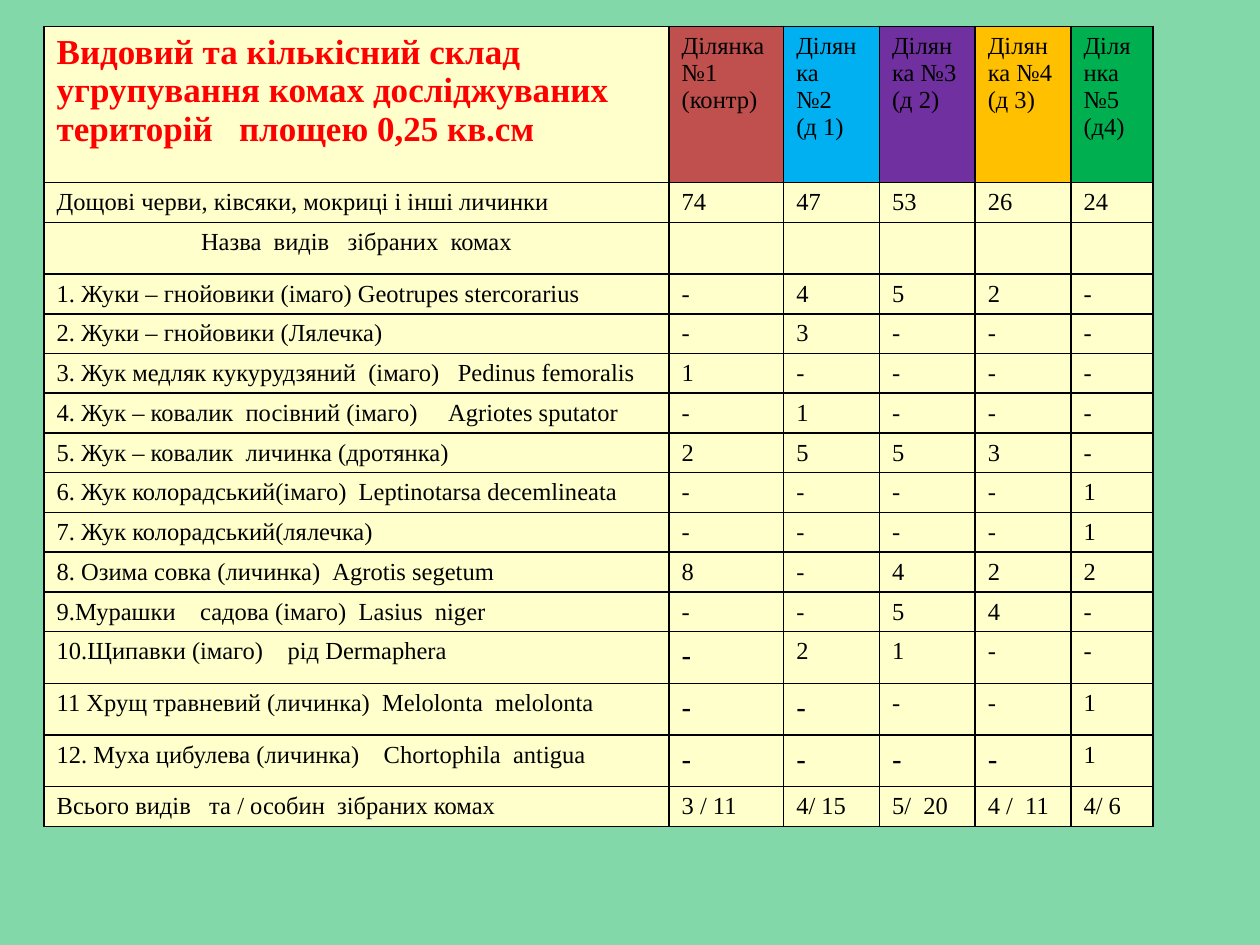
from lxml.etree import SubElement as Sub
from pptx import Presentation
from pptx.dml.color import RGBColor as RGB
from pptx.enum.text import PP_ALIGN as Align
from pptx.oxml.ns import qn
from pptx.util import Inches as In, Pt

HUES = {
    "back": "82D8A9", "cream": "FFFFCC", "title": "FF0000", "ink": "000000",
    "plot1": "C0504D", "plot2": "00B0F0", "plot3": "7030A0",
    "plot4": "FFC000", "plot5": "00B050",
}
SERIF, SANS = "Times New Roman", "Calibri"

# Column widths and row heights of the grid, in inches
COLS = [4.96, 0.91, 0.76, 0.76, 0.76, 0.65]
HEAD, ROW, TALL = 1.24, 0.31, 0.41
# Tall rows, with how many counts in each are set large
LARGE = {2: 5, 12: 1, 13: 2, 14: 4}

HEADS = [
    "Видовий та кількісний склад угрупування комах досліджуваних "
    "територій   площею 0,25 кв.см",
    "Ділянка №1\n(контр)", "Ділянка\n№2\n(д 1)", "Ділянка №3\n(д 2)",
    "Ділянка №4\n(д 3)", "Ділянка №5\n(д4)",
]
# Name and five counts for each row
ROWS = [line.split("|") for line in (
    "Дощові черви, ківсяки, мокриці і інші личинки|74|47|53|26|24",
    "Назва  видів   зібраних  комах|||||",
    "1. Жуки – гнойовики (імаго) Geotrupes stercorarius|-|4|5|2|-",
    "2. Жуки – гнойовики (Лялечка)|-|3|-|-|-",
    "3. Жук медляк кукурудзяний  (імаго)   Pedinus femoralis|1|-|-|-|-",
    "4. Жук – ковалик  посівний (імаго)     Agriotes sputator|-|1|-|-|-",
    "5. Жук – ковалик  личинка (дротянка)|2|5|5|3|-",
    "6. Жук колорадський(імаго)  Leptinotarsa decemlineata|-|-|-|-|1",
    "7. Жук колорадський(лялечка)|-|-|-|-|1",
    "8. Озима совка (личинка)  Agrotis segetum|8|-|4|2|2",
    "9.Мурашки    садова (імаго)  Lasius  niger|-|-|5|4|-",
    "10.Щипавки (імаго)    рід Dermaphera|-|2|1|-|-",
    "11 Хрущ травневий (личинка)  Melolonta  melolonta|-|-|-|-|1",
    "12. Муха цибулева (личинка)    Chortophila  antigua|-|-|-|-|1",
    "Всього видів   та / особин  зібраних комах|3 / 11|4/ 15|5/  20|4 /  11|4/ 6",
)]


def hue(name):
    return RGB.from_string(HUES[name])


def edge(cell):
    """Draw a thin line on all four sides; lines go before the fill."""
    props = cell._tc.get_or_add_tcPr()
    for side in ("lnL", "lnR", "lnT", "lnB"):
        line = Sub(props, qn("a:" + side), w=str(Pt(1)))
        fill = Sub(line, qn("a:solidFill"))
        Sub(fill, qn("a:srgbClr"), val=HUES["ink"])


def fill_cell(cell, text, size=14, face=SERIF, ink="ink", back="cream",
              bold=False, align=Align.LEFT):
    edge(cell)
    cell.fill.solid()
    cell.fill.fore_color.rgb = hue(back)
    cell.text = text
    for para in cell.text_frame.paragraphs:
        para.alignment = align
        font = para.font
        font.size, font.name, font.bold = Pt(size), face, bold
        font.color.rgb = hue(ink)


def add_grid(slide, left, top):
    """Place the insect table with its corner at left, top."""
    highs = [HEAD] + [TALL if r in LARGE else ROW
                      for r in range(1, len(ROWS) + 1)]
    grid = slide.shapes.add_table(
        len(highs), len(COLS), In(left), In(top),
        In(sum(COLS)), In(sum(highs))).table
    grid.first_row = grid.horz_banding = False
    for col, wide in zip(grid.columns, COLS):
        col.width = In(wide)
    for row, high in zip(grid.rows, highs):
        row.height = In(high)

    # Header: title and the five plots
    fill_cell(grid.cell(0, 0), HEADS[0], size=20, ink="title", bold=True)
    for c, text in enumerate(HEADS[1:], 1):
        fill_cell(grid.cell(0, c), text, back=f"plot{c}")

    # Body: names and counts
    for r, row in enumerate(ROWS, 1):
        for c, text in enumerate(row):
            large = 0 < c <= LARGE.get(r, 0)
            mid = r == 2 and c == 0
            fill_cell(grid.cell(r, c), text,
                      size=18 if large else 14,
                      face=SANS if large else SERIF,
                      align=Align.CENTER if mid else Align.LEFT)


def main():
    deck = Presentation()
    deck.slide_width, deck.slide_height = In(10), In(7.5)
    slide = deck.slides.add_slide(deck.slide_layouts[6])
    back = slide.background.fill
    back.solid()
    back.fore_color.rgb = hue("back")
    add_grid(slide, 0.35, 0.21)
    deck.save("out.pptx")


if __name__ == "__main__":
    main()
